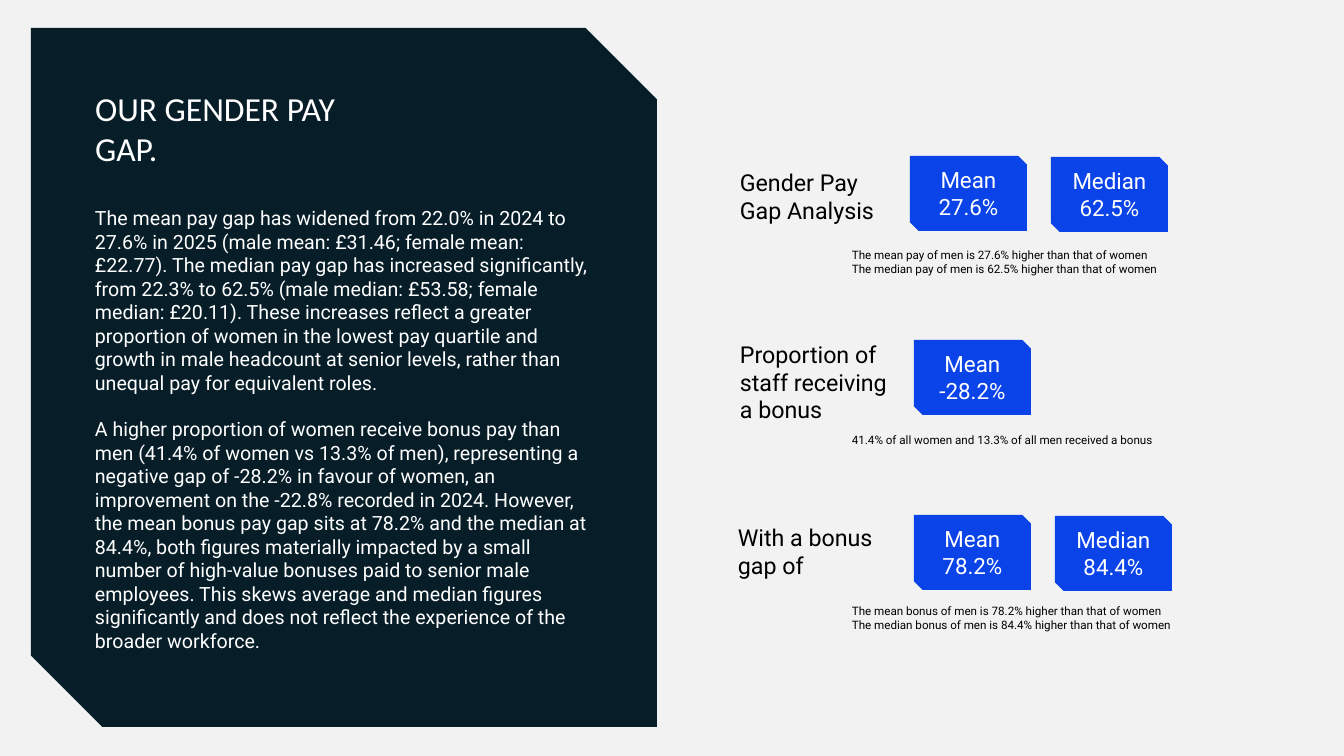
from pptx import Presentation
from pptx.dml.color import RGBColor
from pptx.enum.shapes import MSO_SHAPE
from pptx.enum.text import MSO_ANCHOR, MSO_AUTO_SIZE, PP_ALIGN
from pptx.util import Emu, Pt

SNIP = MSO_SHAPE.SNIP_2_DIAG_RECTANGLE
TOP, MIDDLE = MSO_ANCHOR.TOP, MSO_ANCHOR.MIDDLE
LEFT, CENTER = PP_ALIGN.LEFT, PP_ALIGN.CENTER
NO_FIT = MSO_AUTO_SIZE.NONE
COLORS = {"page": "F2F2F2", "panel": "071E29", "chip": "0A44E8",
          "light": "FFFFFF", "dark": "000000"}
PX = 914400 / 100.8


def px(*lengths):
    return [Emu(round(n * PX)) for n in lengths]


def write(shape, text, size=14, font="Roboto", color="dark", align=LEFT,
          anchor=TOP, gap=0):
    tf = shape.text_frame
    tf.word_wrap = True
    tf.auto_size = NO_FIT
    tf.vertical_anchor = anchor
    for i, line in enumerate(text.split("\n")):
        p = tf.paragraphs[0] if i == 0 else tf.add_paragraph()
        p.alignment = align
        p.space_before = Pt(gap if i else 0)
        r = p.add_run()
        r.text = line
        r.font.size = Pt(size)
        r.font.name = font
        r.font.color.rgb = RGBColor.from_string(COLORS[color])


prs = Presentation()
prs.slide_width, prs.slide_height = px(1344, 756)
s = prs.slides.add_slide(prs.slide_layouts[5])
s.background.fill.solid()
s.background.fill.fore_color.rgb = RGBColor.from_string(COLORS["page"])

# Dark panel and value chips share one snipped shape
CHIP_W, CHIP_H, CHIP_STEP = 117, 75, 141
snips = [(31, 28, 626, 699, "panel", "")]
rows = [
    (910, 156, ["Mean\n27.6%", "Median\n62.5%"]),
    (914, 340, ["Mean\n-28.2%"]),
    (914, 515, ["Mean\n78.2%", "Median\n84.4%"]),
]
for x, y, values in rows:
    for i, value in enumerate(values):
        snips.append((x + i * CHIP_STEP, y + i, CHIP_W, CHIP_H, "chip", value))

for x, y, w, h, color, text in snips:
    sp = s.shapes.add_shape(SNIP, *px(x, y, w, h))
    sp.adjustments[0] = 0
    sp.adjustments[1] = 0.114
    sp.shadow.inherit = False
    sp.fill.solid()
    sp.fill.fore_color.rgb = RGBColor.from_string(COLORS[color])
    sp.line.fill.background()
    if text:
        write(sp, text, size=16, color="light", align=CENTER, anchor=MIDDLE)

# Title, brought in front of the panel
title = s.shapes.title
title.left, title.top, title.width, title.height = px(85, 83, 295, 92)
write(title, "OUR GENDER PAY GAP.", size=24, font="Calibri", color="light")
s.shapes.element.append(title.element)

# Commentary
commentary = [
    "The mean pay gap has widened from 22.0% in 2024 to 27.6% in 2025 "
    "(male mean: £31.46; female mean: £22.77). The median pay gap has "
    "increased significantly, from 22.3% to 62.5% (male median: £53.58; "
    "female median: £20.11). These increases reflect a greater proportion "
    "of women in the lowest pay quartile and growth in male headcount at "
    "senior levels, rather than unequal pay for equivalent roles.",
    "A higher proportion of women receive bonus pay than men (41.4% of "
    "women vs 13.3% of men), representing a negative gap of -28.2% in "
    "favour of women, an improvement on the -22.8% recorded in 2024. "
    "However, the mean bonus pay gap sits at 78.2% and the median at 84.4%, "
    "both figures materially impacted by a small number of high-value "
    "bonuses paid to senior male employees. This skews average and median "
    "figures significantly and does not reflect the experience of the "
    "broader workforce.",
]
body = s.shapes.add_textbox(*px(85, 201, 523, 437))
write(body, "\n".join(commentary), color="light", gap=16.4)

# Row labels
labels = [
    (730, 163, 67, "Gender Pay Gap Analysis"),
    (730, 335, 95, "Proportion of staff receiving a bonus"),
    (728, 518, 67, "With a bonus gap of"),
]
for x, y, h, text in labels:
    write(s.shapes.add_textbox(*px(x, y, 184, h)), text, size=16.6)

# Notes under the chips
notes = [
    (243, 52, "The mean pay of men is 27.6% higher than that of women\n"
              "The median pay of men is 62.5% higher than that of women"),
    (428, 38, "41.4% of all women and 13.3% of all men received a bonus"),
    (599, 38, "The mean bonus of men is 78.2% higher than that of women\n"
              "The median bonus of men is 84.4% higher than that of women"),
]
for y, h, text in notes:
    write(s.shapes.add_textbox(*px(842, y, 371, h)), text, size=8.3)

prs.save("out.pptx")
